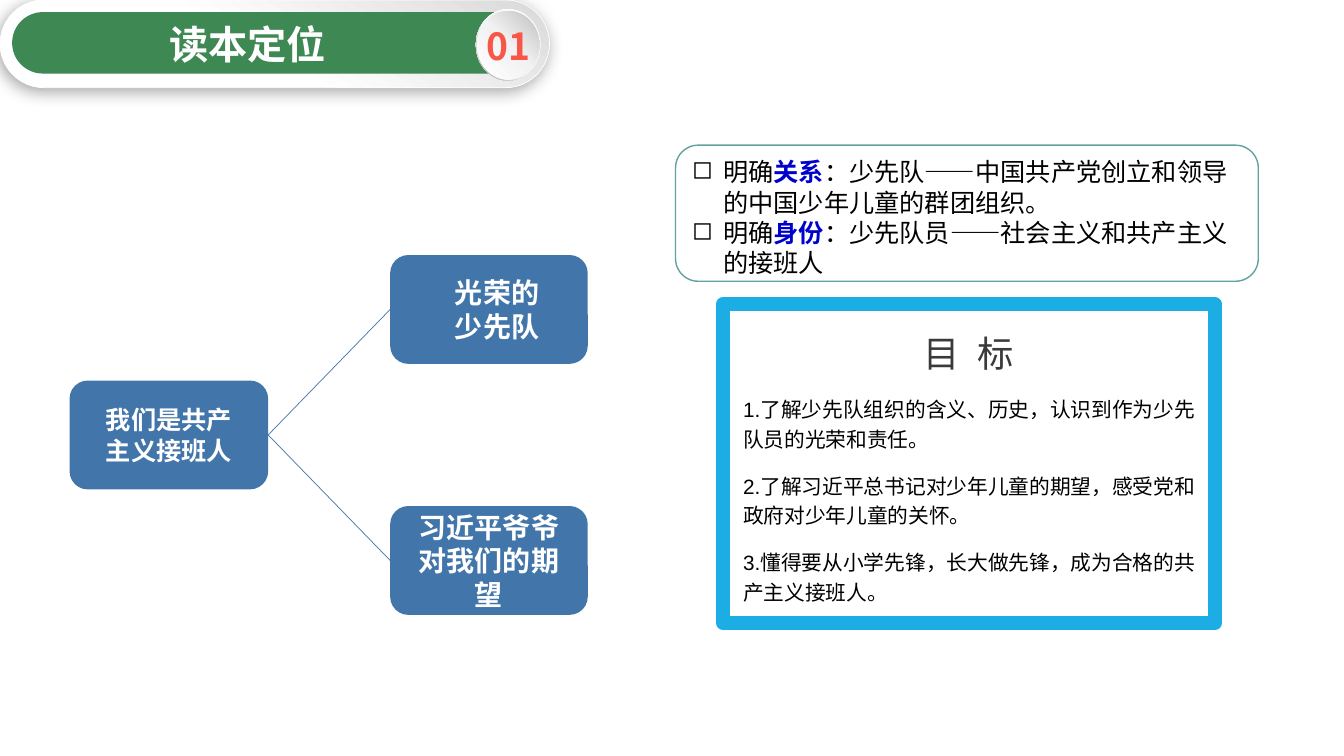
from lxml.etree import SubElement
from pptx import Presentation
from pptx.dml.color import RGBColor
from pptx.enum.shapes import MSO_CONNECTOR, MSO_SHAPE
from pptx.enum.text import MSO_ANCHOR, MSO_AUTO_SIZE, PP_ALIGN
from pptx.oxml.ns import qn
from pptx.util import Inches, Pt

CJK = "Noto Sans CJK SC"
LATIN = "Arial"
WHITE = RGBColor(0xFF, 0xFF, 0xFF)
BLACK = RGBColor(0x00, 0x00, 0x00)
CARD_BLUE = RGBColor(0x42, 0x76, 0xAA)
KEY_BLUE = RGBColor(0x00, 0x00, 0xCC)
FRAME_BLUE = RGBColor(0x1C, 0xAD, 0xE4)
TEAL = RGBColor(0x62, 0xA3, 0x9F)
GREEN = RGBColor(0x3E, 0x88, 0x53)
CORAL = RGBColor(0xF9, 0x56, 0x47)
CHARCOAL = RGBColor(0x3A, 0x3A, 0x3A)
PALE = RGBColor(0xF2, 0xF2, 0xF2)
SILVER = RGBColor(0xD9, 0xD9, 0xD9)
GREY = RGBColor(0xBF, 0xBF, 0xBF)
DARK_GREY = RGBColor(0xA6, 0xA6, 0xA6)
COL = ROW = Inches(1)

presentation = Presentation()
presentation.slide_width = int(13.33 * COL)
presentation.slide_height = int(7.5 * ROW)
slide = presentation.slides.add_slide(presentation.slide_layouts[5])


def add_panel(kind, left, top, width, height, fill, line=None, weight=1):
    panel = slide.shapes.add_shape(
        kind, int(left * COL), int(top * ROW), int(width * COL), int(height * ROW))
    panel.shadow.inherit = False
    if isinstance(fill, RGBColor):
        panel.fill.solid()
        panel.fill.fore_color.rgb = fill
    else:
        angle, stops = fill
        panel.fill.gradient()
        panel.fill.gradient_angle = 360 - angle
        stop_list = panel._element.spPr.find(qn("a:gradFill")).find(qn("a:gsLst"))
        stop_list.clear()
        for position, color in stops:
            stop = SubElement(stop_list, qn("a:gs"), pos=str(position * 1000))
            SubElement(stop, qn("a:srgbClr"), val=str(color))
    if line is None:
        panel.line.fill.background()
    else:
        panel.line.color.rgb = line
        panel.line.width = Pt(weight)
    panel.text_frame.word_wrap = True
    return panel


def add_run(paragraph, text, size, color, face=CJK, bold=False):
    run = paragraph.add_run()
    run.text = text
    run.font.size = Pt(size)
    run.font.bold = bold
    run.font.color.rgb = color
    run.font.name = face
    properties = run._r.get_or_add_rPr()
    properties.set("lang", "zh-CN")
    SubElement(properties, qn("a:ea"), typeface=CJK)
    return run


CARD_TOP, CARD_STEP = 2.53, 1.245
cards = []
for left, step, width, size, insets, lines in [
    (0.69, 1, 1.97, 18, (0.25, 0.25), ["我们是共产主义接班人"]),
    (3.87, 0, 1.96, 20, (0.26, 0.1), ["光荣的", "少先队"]),
    (3.87, 2, 1.96, 20, (0.1, 0.1), ["习近平爷爷对我们的期望"]),
]:
    card = add_panel(MSO_SHAPE.ROUNDED_RECTANGLE, left, CARD_TOP + step * CARD_STEP,
                     width, 1.08, CARD_BLUE)
    frame = card.text_frame
    frame.vertical_anchor = MSO_ANCHOR.MIDDLE
    frame.margin_left, frame.margin_right = (int(inset * COL) for inset in insets)
    for index, line in enumerate(lines):
        paragraph = frame.add_paragraph() if index else frame.paragraphs[0]
        paragraph.alignment = PP_ALIGN.CENTER
        add_run(paragraph, line, size, WHITE, bold=True)
    cards.append(card)

theme, *topics = cards
for topic in topics:
    branch = slide.shapes.add_connector(MSO_CONNECTOR.STRAIGHT, 0, 0, COL, ROW)
    branch.begin_connect(theme, 3)
    branch.end_connect(topic, 1)
    branch.line.color.rgb = CARD_BLUE
    branch.line.width = Pt(0.5)
    SubElement(branch._element.spPr, qn("a:effectLst"))

goals = add_panel(MSO_SHAPE.RECTANGLE, 7.17, 3.02, 4.88, 3.16, WHITE, FRAME_BLUE, 10)
frame = goals.text_frame
frame.vertical_anchor = MSO_ANCHOR.MIDDLE
frame.margin_left = frame.margin_right = int(0.2 * COL)
frame.margin_top = frame.margin_bottom = int(0.1 * ROW)
heading = frame.paragraphs[0]
heading.alignment = PP_ALIGN.CENTER
heading.line_spacing = 1.2
heading_run = add_run(heading, "目 标", 25.9, CHARCOAL, LATIN)
heading_run._r.get_or_add_rPr().set("spc", "360")
for goal in [
    "1.了解少先队组织的含义、历史，认识到作为少先队员的光荣和责任。",
    "2.了解习近平总书记对少年儿童的期望，感受党和政府对少年儿童的关怀。",
    "3.懂得要从小学先锋，长大做先锋，成为合格的共产主义接班人。",
]:
    paragraph = frame.add_paragraph()
    paragraph.alignment = PP_ALIGN.JUSTIFY
    paragraph.line_spacing = 1.2
    paragraph.space_before = Pt(12)
    add_run(paragraph, goal, 14.8, BLACK, LATIN)

notes = add_panel(MSO_SHAPE.ROUNDED_RECTANGLE, 6.7, 1.44, 5.78, 1.35, WHITE, TEAL)
frame = notes.text_frame
frame.vertical_anchor = MSO_ANCHOR.TOP
for index, (keyword, meaning) in enumerate([
    ("关系", "：少先队——中国共产党创立和领导的中国少年儿童的群团组织。"),
    ("身份", "：少先队员——社会主义和共产主义的接班人"),
]):
    paragraph = frame.add_paragraph() if index else frame.paragraphs[0]
    paragraph.alignment = PP_ALIGN.LEFT
    indent = int(0.31 * COL)
    properties = paragraph._p.get_or_add_pPr()
    properties.set("marL", str(indent))
    properties.set("indent", str(-indent))
    SubElement(properties, qn("a:buChar"), char="◻")
    add_run(paragraph, "明确", 18, BLACK, LATIN)
    add_run(paragraph, keyword, 18, KEY_BLUE, LATIN, bold=True)
    add_run(paragraph, meaning, 18, BLACK, LATIN)

banner = add_panel(MSO_SHAPE.ROUNDED_RECTANGLE, 0, 0, 5.45, 0.87,
                   (300, [(45, WHITE), (100, SILVER)]), WHITE, 0.5)
banner.adjustments[0] = 0.5
shadow = SubElement(banner._element.spPr.find(qn("a:effectLst")), qn("a:outerShdw"),
                    blurRad=str(Pt(12)), dist=str(Pt(3)), dir=str(135 * 60000),
                    algn="ctr", rotWithShape="0")
shadow_color = SubElement(shadow, qn("a:srgbClr"), val=str(BLACK))
SubElement(shadow_color, qn("a:alpha"), val="34000")

ribbon = add_panel(MSO_SHAPE.ROUNDED_RECTANGLE, 0.12, 0.12, 5.19, 0.61, GREEN)
ribbon.adjustments[0] = 0.5
ring = add_panel(MSO_SHAPE.DONUT, 4.72, 0.09, 0.64, 0.71,
                 (135, [(0, WHITE), (55, PALE), (100, DARK_GREY)]))
ring.adjustments[0] = 0.05
badge = add_panel(MSO_SHAPE.OVAL, 4.73, 0.11, 0.62, 0.68,
                  (315, [(0, WHITE), (51, PALE), (100, GREY)]))
frame = badge.text_frame
frame.word_wrap = False
frame.vertical_anchor = MSO_ANCHOR.MIDDLE
frame.margin_left = frame.margin_right = frame.margin_top = frame.margin_bottom = 0
frame.paragraphs[0].alignment = PP_ALIGN.CENTER
add_run(frame.paragraphs[0], "01", 26.6, CORAL, bold=True)

title = slide.shapes.title
title.left, title.top = int(1.58 * COL), int(0.15 * ROW)
title.width, title.height = int(1.86 * COL), int(0.57 * ROW)
frame = title.text_frame
frame.auto_size = MSO_AUTO_SIZE.NONE
frame.word_wrap = False
frame.vertical_anchor = MSO_ANCHOR.MIDDLE
frame.paragraphs[0].alignment = PP_ALIGN.LEFT
add_run(frame.paragraphs[0], "读本定位", 28, WHITE, bold=True)
ribbon._element.addnext(title._element)

presentation.save("out.pptx")
